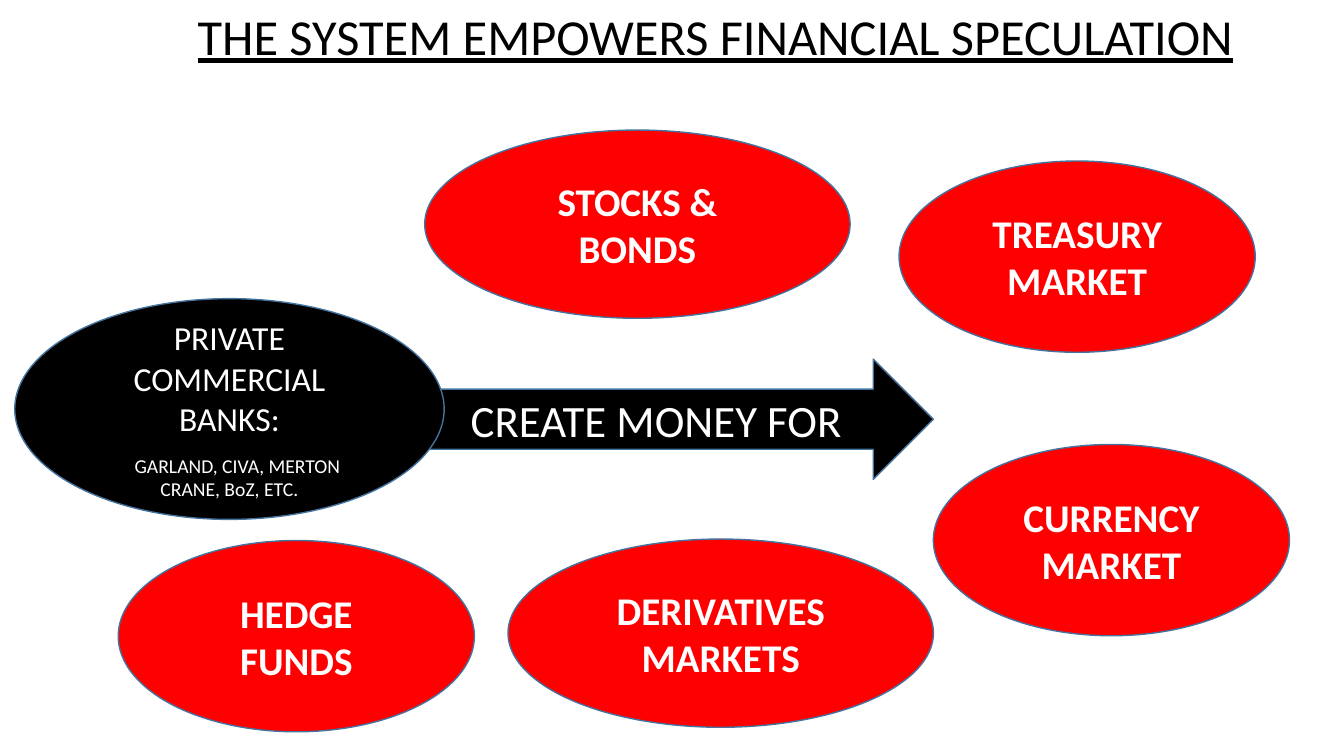
from pptx import Presentation
from pptx.dml.color import RGBColor
from pptx.enum.shapes import MSO_SHAPE as Shape
from pptx.enum.text import MSO_ANCHOR as Anchor, MSO_AUTO_SIZE as AutoSize, PP_ALIGN as Align
from pptx.util import Inches, Pt

BLACK, WHITE, RED, EDGE = "000000", "FFFFFF", "FF0000", "43739E"
WIDE, NARROW = (31.65, 24.9), (26.5, 25.3)
MARKETS = [
    (("CURRENCY", "MARKET"), (69.45, 58.8), NARROW),
    (("STOCKS &", "BONDS"), (31.6, 17.2), WIDE),
    (("TREASURY", "MARKET"), (66.9, 21.3), NARROW),
    (("HEDGE", "FUNDS"), (8.8, 71.5), NARROW),
    (("DERIVATIVES", "MARKETS"), (37.8, 71.3), WIDE),
]


def rgb(value):
    """Turn a hex string into a colour."""
    return RGBColor.from_string(value)


class Deck:
    """Holds the style and the current slide; places are percentages of it."""

    font = "Calibri"

    def __init__(self):
        """Open a wide presentation with one title slide."""
        self.prs = Presentation()
        self.prs.slide_width, self.prs.slide_height = Inches(13.333), Inches(7.5)
        self.s = self.prs.slides.add_slide(self.prs.slide_layouts[5])

    def box(self, at, size):
        """Convert percentages to left, top, width and height."""
        w, h = self.prs.slide_width, self.prs.slide_height
        return [int(share * full / 100) for share, full in zip((*at, *size), (w, h, w, h))]

    def run(self, p, text, size, color, bold=False, underline=False):
        """Add one styled run to a paragraph."""
        r = p.add_run()
        r.text = text
        f = r.font
        f.name, f.size, f.bold, f.underline = self.font, Pt(size), bold, underline
        f.color.rgb = rgb(color)

    def title(self, text, at, size):
        """Move and fill the title placeholder."""
        sp = self.s.shapes.title
        sp.left, sp.top, sp.width, sp.height = self.box(at, size)
        tf = sp.text_frame
        tf.word_wrap, tf.auto_size, tf.vertical_anchor = False, AutoSize.NONE, Anchor.TOP
        p = tf.paragraphs[0]
        p.alignment = Align.LEFT
        self.run(p, text, 36, BLACK, underline=True)

    def shape(self, kind, lines, at, size, fill, bold=False):
        """Draw a filled shape with centred (text, size) lines."""
        sp = self.s.shapes.add_shape(kind, *self.box(at, size))
        sp.shadow.inherit = False
        sp.fill.solid()
        sp.fill.fore_color.rgb = rgb(fill)
        sp.line.color.rgb = rgb(EDGE)
        sp.line.width = Pt(1)
        tf = sp.text_frame
        tf.word_wrap, tf.vertical_anchor = True, Anchor.MIDDLE
        for i, (text, points) in enumerate(lines):
            p = tf.add_paragraph() if i else tf.paragraphs[0]
            p.alignment = Align.CENTER
            self.run(p, text, points, WHITE, bold)
        return tf

    def market(self, words, at, size):
        """Draw a red market ellipse."""
        self.shape(Shape.OVAL, [(word, 28) for word in words], at, size, RED, True)

    def banks(self, heading, names, at, size):
        """Draw the black ellipse of banks with a smaller list of names."""
        tf = self.shape(Shape.OVAL, [(heading, 24), (names, 14)], at, size, BLACK)
        p = tf.paragraphs[1]
        p.space_before = Pt(11)
        pPr = p._p.get_or_add_pPr()
        pPr.set("marL", "0")
        pPr.set("indent", str(Inches(0.16)))


def main():
    """Build and save the slide."""
    deck = Deck()
    deck.title("THE SYSTEM EMPOWERS FINANCIAL SPECULATION", (13.95, 0), (79.4, 9.5))
    deck.shape(Shape.RIGHT_ARROW, [("CREATE MONEY FOR", 32)], (30.45, 47.5), (39, 15.9), BLACK)
    deck.banks("PRIVATE COMMERCIAL BANKS:", "GARLAND, CIVA, MERTON CRANE, BoZ, ETC.",
               (1.1, 39.5), (31.95, 29.2))
    for words, at, size in MARKETS:
        deck.market(words, at, size)
    deck.prs.save("out.pptx")


if __name__ == "__main__":
    main()
